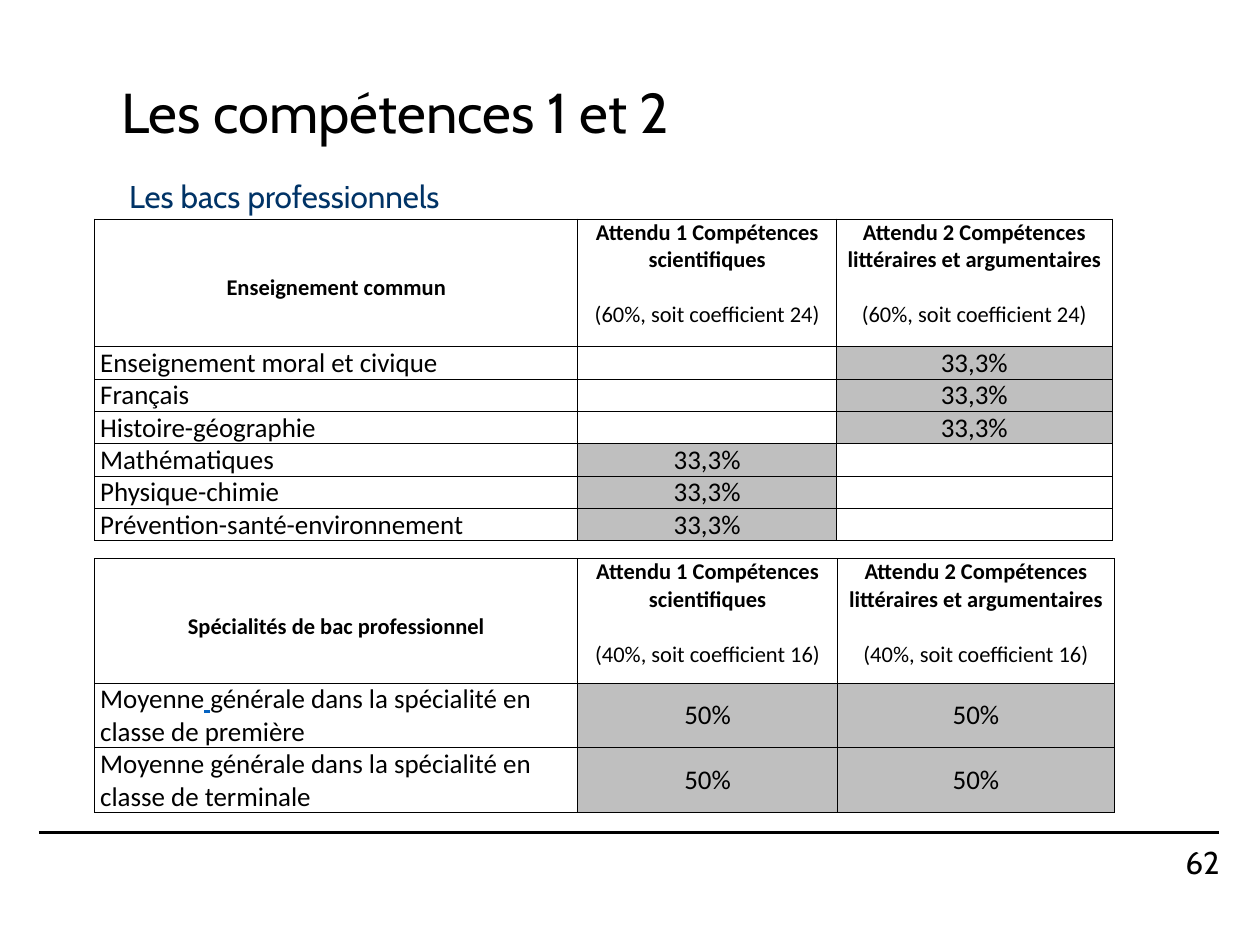
from dataclasses import dataclass

from lxml.etree import SubElement
from pptx import Presentation
from pptx.dml.color import RGBColor
from pptx.enum.shapes import MSO_CONNECTOR
from pptx.enum.text import MSO_ANCHOR, MSO_AUTO_SIZE, PP_ALIGN
from pptx.oxml.ns import qn
from pptx.slide import Slide
from pptx.table import _Cell
from pptx.text.text import TextFrame
from pptx.util import Inches, Pt

BLACK, WHITE, GREY, NAVY, LINK_BLUE = "000000", "FFFFFF", "BFBFBF", "003366", "0563C1"
HEADER_SIZE, BODY_SIZE = 20, 24
HEADER_LINE = 1.22 * HEADER_SIZE


@dataclass(frozen=True)
class Span:
    text: str
    color: str = BLACK
    bold: bool = False
    underline: bool = False


@dataclass(frozen=True)
class SubjectRow:
    label: tuple[Span, ...]
    shares: tuple[str, str]


@dataclass(frozen=True)
class SkillTable:
    heading: str
    weight: str
    top: float
    column_widths: tuple[float, ...]
    header_height: float
    row_height: float
    rows: tuple[SubjectRow, ...]


def subject(label: str, first: str = "", second: str = "") -> SubjectRow:
    return SubjectRow((Span(label),), (first, second))


TABLES = (
    SkillTable(
        "Enseignement commun", "(60%, soit coefficient 24)",
        2.71, (5.98, 3.2, 3.41), 1.58, 0.4,
        (
            subject("Enseignement moral et civique", second="33,3%"),
            subject("Français", second="33,3%"),
            subject("Histoire-géographie", second="33,3%"),
            subject("Mathématiques", first="33,3%"),
            subject("Physique-chimie", first="33,3%"),
            subject("Prévention-santé-environnement", first="33,3%"),
        ),
    ),
    SkillTable(
        "Spécialités de bac professionnel", "(40%, soit coefficient 16)",
        6.91, (5.98, 3.21, 3.43), 1.54, 0.8,
        (
            SubjectRow(
                (
                    Span("Moyenne"),
                    Span(" ", LINK_BLUE, underline=True),
                    Span("générale dans la spécialité en classe de première"),
                ),
                ("50%", "50%"),
            ),
            subject("Moyenne générale dans la spécialité en classe de terminale", "50%", "50%"),
        ),
    ),
)
SKILLS = (
    "Attendu 1 Compétences scientifiques",
    "Attendu 2 Compétences littéraires et argumentaires",
)


def rgb(value: str) -> RGBColor:
    return RGBColor.from_string(value)


def write(
    frame: TextFrame,
    *lines: tuple[Span, ...],
    size: float,
    font: str = "Calibri",
    align: PP_ALIGN = PP_ALIGN.LEFT,
    gap: float = 0,
    line_spacing: float = 1.0,
) -> None:
    """Write one paragraph per line, with gap points between paragraphs."""
    for index, line in enumerate(lines):
        para = frame.add_paragraph() if index else frame.paragraphs[0]
        para.alignment = align
        para.line_spacing = line_spacing
        para.space_before = Pt(gap if index else 0)
        for span in line:
            run = para.add_run()
            run.text = span.text
            run.font.name = font
            run.font.size = Pt(size)
            run.font.bold = span.bold
            run.font.underline = span.underline
            run.font.color.rgb = rgb(span.color)


def format_cell(cell: _Cell, fill: str, anchor: MSO_ANCHOR, margin_top: float = 0) -> None:
    cell.margin_left = cell.margin_right = Inches(0.07)
    cell.margin_top, cell.margin_bottom = Pt(margin_top), 0
    cell.vertical_anchor = anchor
    properties = cell._tc.get_or_add_tcPr()
    for side in ("a:lnL", "a:lnR", "a:lnT", "a:lnB"):
        border = SubElement(properties, qn(side), w=str(Pt(1)))
        SubElement(SubElement(border, qn("a:solidFill")), qn("a:srgbClr"), val=BLACK)
    cell.fill.solid()
    cell.fill.fore_color.rgb = rgb(fill)


def add_skill_table(page: Slide, content: SkillTable) -> None:
    heights = [content.header_height] + [content.row_height] * len(content.rows)
    table = page.shapes.add_table(
        len(heights), len(content.column_widths), Inches(1.17), Inches(content.top),
        Inches(sum(content.column_widths)), Inches(sum(heights)),
    ).table
    table.first_row = table.horz_banding = False
    for column, width in zip(table.columns, content.column_widths):
        column.width = Inches(width)
    for row, height in zip(table.rows, heights):
        row.height = Inches(height)

    heading = table.cell(0, 0)
    format_cell(heading, WHITE, MSO_ANCHOR.TOP, margin_top=2 * HEADER_LINE)
    write(heading.text_frame, (Span(content.heading, bold=True),),
          size=HEADER_SIZE, align=PP_ALIGN.CENTER)
    for column_index, skill in enumerate(SKILLS, 1):
        cell = table.cell(0, column_index)
        format_cell(cell, WHITE, MSO_ANCHOR.TOP)
        write(cell.text_frame, (Span(skill, bold=True),), (Span(content.weight),),
              size=HEADER_SIZE, align=PP_ALIGN.CENTER, gap=HEADER_LINE)

    for row_index, row in enumerate(content.rows, 1):
        label = table.cell(row_index, 0)
        format_cell(label, WHITE, MSO_ANCHOR.TOP)
        write(label.text_frame, row.label, size=BODY_SIZE)
        for column_index, share in enumerate(row.shares, 1):
            cell = table.cell(row_index, column_index)
            format_cell(cell, GREY if share else WHITE, MSO_ANCHOR.MIDDLE)
            if share:
                write(cell.text_frame, (Span(share),), size=BODY_SIZE, align=PP_ALIGN.CENTER)


def add_title(page: Slide) -> None:
    title = page.shapes.title
    title.left, title.top = Inches(1.4), Inches(0.45)
    title.width, title.height = Inches(13.73), Inches(1.95)
    frame = title.text_frame
    frame.auto_size = MSO_AUTO_SIZE.NONE
    frame.vertical_anchor = MSO_ANCHOR.MIDDLE
    write(frame, (Span("Les compétences 1 et 2"),), size=50, font="Cabin", line_spacing=0.9)


def add_footer(page: Slide) -> None:
    rule = page.shapes.add_connector(
        MSO_CONNECTOR.STRAIGHT, Inches(0.48), Inches(10.3), Inches(15.08), Inches(10.3))
    rule.line.color.rgb = rgb(BLACK)
    rule.line.width = Pt(2)
    SubElement(rule._element.spPr, qn("a:effectLst"))
    box = page.shapes.add_textbox(Inches(12.8), Inches(10.43), Inches(2.29), Inches(0.47))
    frame = box.text_frame
    frame.word_wrap = True
    frame.margin_left = frame.margin_right = frame.margin_top = frame.margin_bottom = 0
    frame.vertical_anchor = MSO_ANCHOR.MIDDLE
    write(frame, (Span("62"),), size=28, font="Cabin", align=PP_ALIGN.RIGHT)


def main() -> None:
    deck = Presentation()
    deck.slide_width, deck.slide_height = Inches(15.59), Inches(11.69)
    page = deck.slides.add_slide(deck.slide_layouts.get_by_name("Title Only"))
    add_footer(page)
    add_title(page)
    subtitle = page.shapes.add_textbox(Inches(1.5), Inches(2.14), Inches(7.64), Inches(0.57))
    subtitle.text_frame.word_wrap = True
    write(subtitle.text_frame, (Span("Les bacs professionnels", NAVY),), size=28, font="Cabin")
    for content in TABLES:
        add_skill_table(page, content)
    deck.save("out.pptx")


if __name__ == "__main__":
    main()
